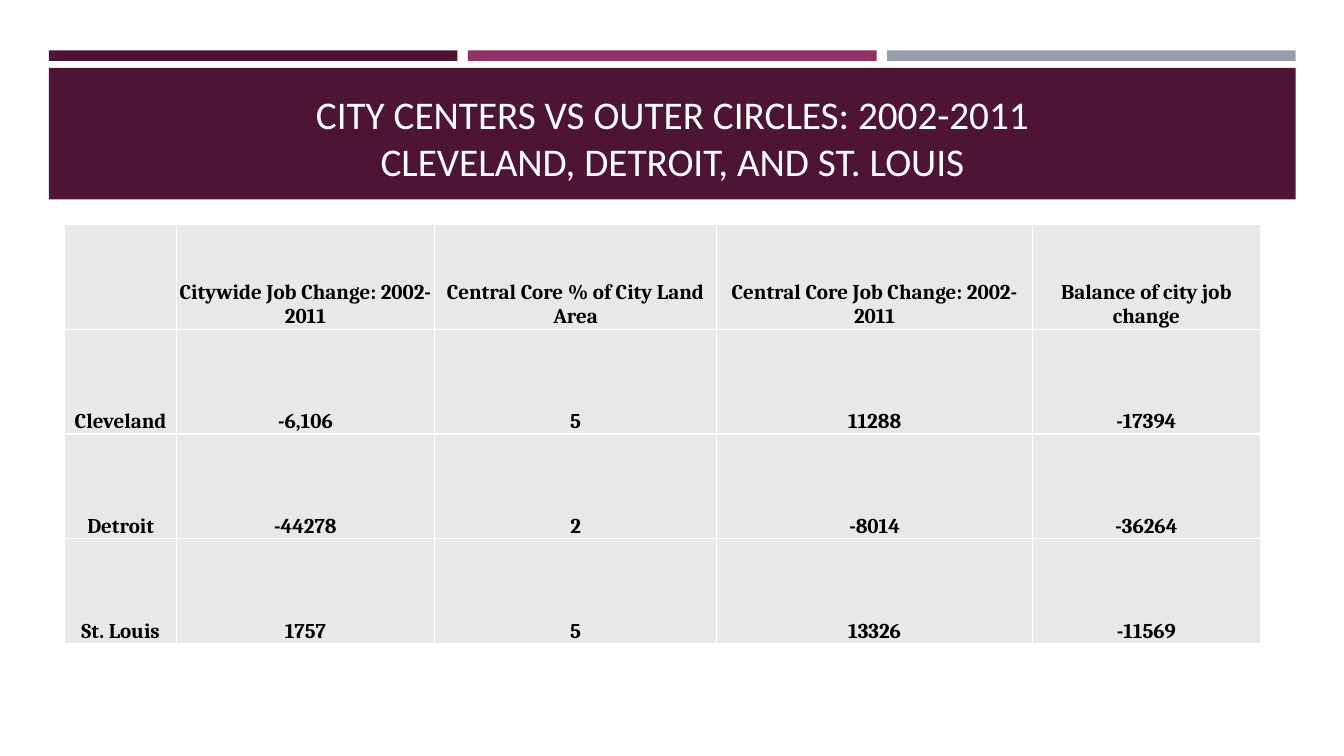
from dataclasses import dataclass

from lxml.etree import SubElement
from pptx import Presentation
from pptx.dml.color import RGBColor
from pptx.enum.shapes import MSO_SHAPE
from pptx.enum.text import MSO_ANCHOR, MSO_AUTO_SIZE, PP_ALIGN
from pptx.oxml.ns import qn
from pptx.slide import Slide
from pptx.table import _Cell
from pptx.text.text import TextFrame
from pptx.util import Inches, Pt

WIDTH, HEIGHT = Inches(13.33), Inches(7.5)
COLORS = {
    "plum": "4D1434",
    "magenta": "903163",
    "slate": "969FA7",
    "cell": "E9E7E8",
    "white": "FFFFFF",
    "black": "000000",
}
MARGIN, BAR_WIDTH, BAR_STEP = 3.64, 30.4, 31.18
BAND_WIDTH = 2 * BAR_STEP + BAR_WIDTH
COLUMN_SHARES = [8.3, 19.2, 21, 23.5, 16.95]
ROW_SHARE = 13.87
TITLE = "CITY CENTERS VS OUTER CIRCLES: 2002-2011\vCLEVELAND, DETROIT, AND ST. LOUIS"
JOB_ROWS = [
    ["", "Citywide Job Change: 2002-2011", "Central Core % of City Land Area",
     "Central Core Job Change: 2002-2011", "Balance of city job change"],
    ["Cleveland", "-6,106", "5", "11288", "-17394"],
    ["Detroit", "-44278", "2", "-8014", "-36264"],
    ["St. Louis", "1757", "5", "13326", "-11569"],
]


def across(share: float) -> int:
    return round(WIDTH * share / 100)


def down(share: float) -> int:
    return round(HEIGHT * share / 100)


@dataclass(frozen=True)
class Box:
    left: float
    top: float
    width: float
    height: float

    def place(self) -> tuple[int, int, int, int]:
        return across(self.left), down(self.top), across(self.width), down(self.height)


@dataclass(frozen=True)
class Block:
    box: Box
    color: str


BLOCKS = [
    Block(Box(MARGIN + i * BAR_STEP, 6.67, BAR_WIDTH, 1.4), color)
    for i, color in enumerate(["plum", "magenta", "slate"])
] + [Block(Box(MARGIN, 8.97, BAND_WIDTH, 17.4), "plum")]
TITLE_BOX = Box(4.8, 10.27, 90.45, 14.8)
TABLE_BOX = Box(4.83, 29.67, sum(COLUMN_SHARES), ROW_SHARE * len(JOB_ROWS))


def rgb(color: str) -> RGBColor:
    return RGBColor.from_string(COLORS[color])


def style_text(tf: TextFrame, font: str, size: float, color: str, bold: bool) -> None:
    for p in tf.paragraphs:
        p.alignment = PP_ALIGN.CENTER
        for r in p.runs:
            r.font.name = font
            r.font.size = Pt(size)
            r.font.bold = bold
            r.font.color.rgb = rgb(color)


def draw_block(s: Slide, block: Block) -> None:
    sp = s.shapes.add_shape(MSO_SHAPE.RECTANGLE, *block.box.place())
    sp.shadow.inherit = False
    sp.fill.solid()
    sp.fill.fore_color.rgb = rgb(block.color)
    sp.line.fill.background()


def draw_title(s: Slide) -> None:
    sp = s.shapes.title
    sp.element.getparent().append(sp.element)
    sp.left, sp.top, sp.width, sp.height = TITLE_BOX.place()
    tf = sp.text_frame
    tf.text = TITLE
    tf.word_wrap = True
    tf.auto_size = MSO_AUTO_SIZE.NONE
    tf.vertical_anchor = MSO_ANCHOR.BOTTOM
    style_text(tf, "Calibri", 28, "white", False)


def format_cell(cell: _Cell, text: str) -> None:
    cell.text = text
    cell.vertical_anchor = MSO_ANCHOR.BOTTOM
    cell.margin_left = cell.margin_right = cell.margin_top = Inches(0.01)
    cell.margin_bottom = 0
    style_text(cell.text_frame, "Cambria", 15, "black", True)
    props = cell._tc.get_or_add_tcPr()
    for side in ("lnL", "lnR", "lnT", "lnB"):
        border = SubElement(props, qn(f"a:{side}"), w=str(Pt(1)))
        fill = SubElement(border, qn("a:solidFill"))
        SubElement(fill, qn("a:srgbClr"), val=COLORS["white"])
    cell.fill.solid()
    cell.fill.fore_color.rgb = rgb("cell")


def draw_table(s: Slide) -> None:
    table = s.shapes.add_table(len(JOB_ROWS), len(COLUMN_SHARES), *TABLE_BOX.place()).table
    for column, share in zip(table.columns, COLUMN_SHARES):
        column.width = across(share)
    for i, texts in enumerate(JOB_ROWS):
        table.rows[i].height = down(ROW_SHARE)
        for j, text in enumerate(texts):
            format_cell(table.cell(i, j), text)


def main() -> None:
    prs = Presentation()
    prs.slide_width, prs.slide_height = WIDTH, HEIGHT
    s = prs.slides.add_slide(prs.slide_layouts.get_by_name("Title Only"))
    for block in BLOCKS:
        draw_block(s, block)
    draw_title(s)
    draw_table(s)
    prs.save("out.pptx")


if __name__ == "__main__":
    main()
